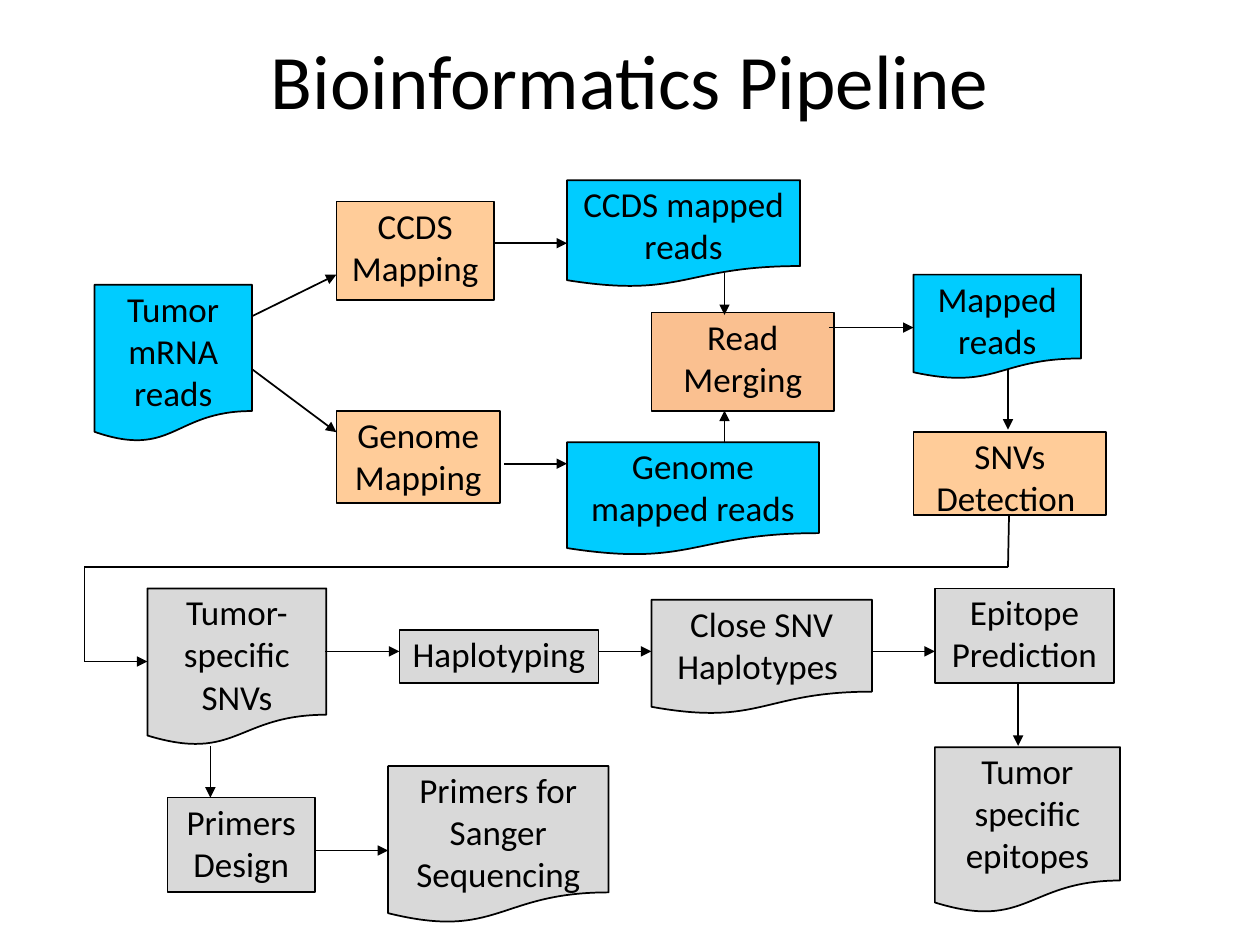
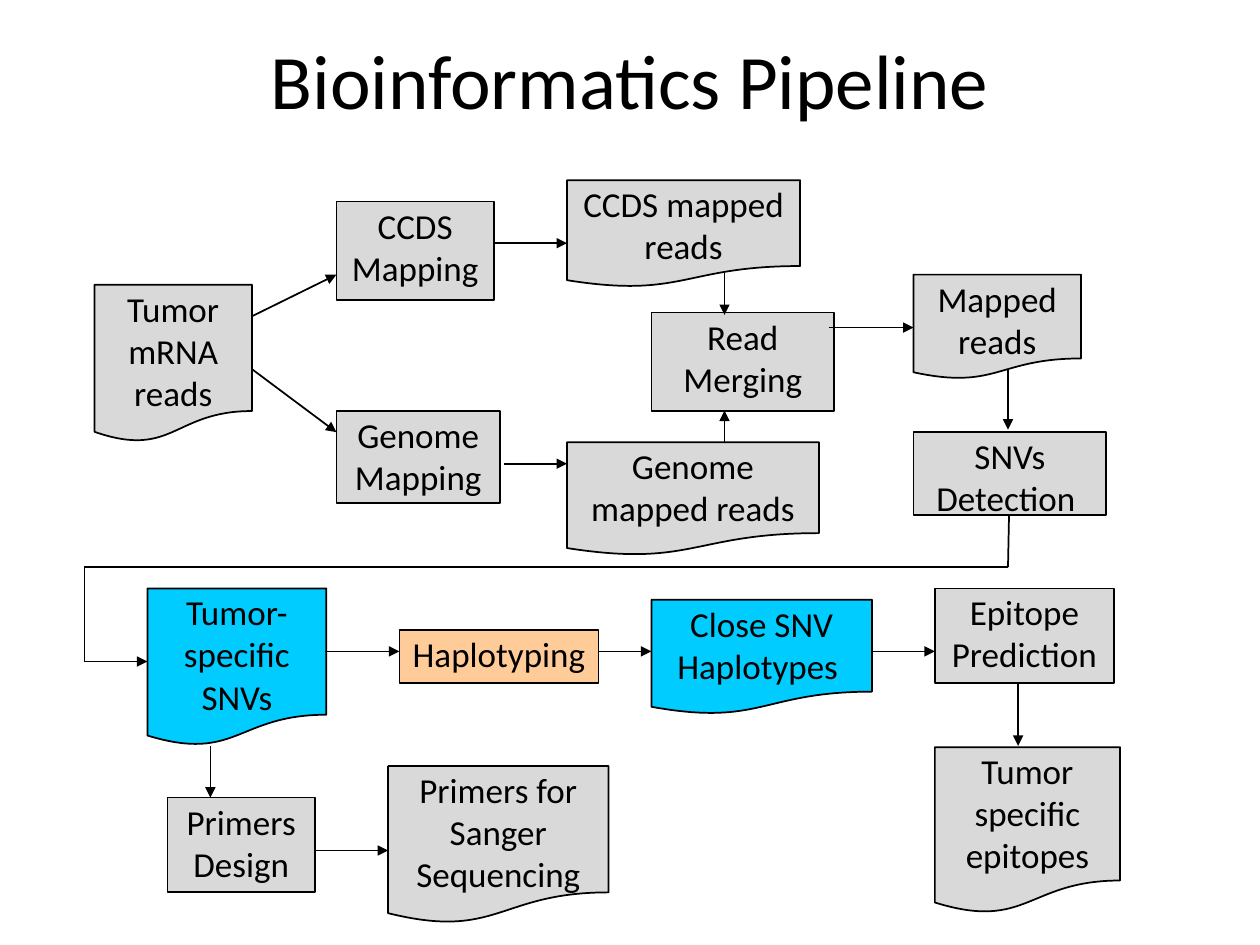
import lxml.etree
import pptx
import pptx.util
import pptx.dml.color
import pptx.enum.shapes
import pptx.enum.text
import pptx.oxml.ns

Inches = pptx.util.Inches
Pt = pptx.util.Pt
qn = pptx.oxml.ns.qn
SHAPES = pptx.enum.shapes.MSO_SHAPE

TITLE = "Bioinformatics Pipeline"
FONT = "Calibri"
BLACK = "000000"
INACTIVE = "D9D9D9"
KINDS = {
    "data": (SHAPES.FLOWCHART_DOCUMENT, "00CCFF"),
    "process": (SHAPES.FLOWCHART_PROCESS, "FFCC99"),
}

STEPS = {
    "tumor reads": ("data", ["Tumor mRNA reads"], (0.75, 2.26, 1.25, 1.25)),
    "ccds mapping": ("process", ["CCDS", "Mapping"], (2.67, 1.6, 1.25, 0.78)),
    "genome mapping": ("process", ["Genome Mapping"], (2.67, 3.26, 1.3, 0.73)),
    "read merging": ("process", ["Read Merging"], (5.17, 2.48, 1.45, 0.78)),
    "ccds reads": ("data", ["CCDS mapped reads"], (4.5, 1.43, 1.85, 0.85)),
    "genome reads": ("data", ["Genome mapped reads"], (4.5, 3.51, 2, 0.9)),
    "snv detection": ("process", ["SNVs Detection "], (7.25, 3.43, 1.53, 0.66)),
    "mapped reads": ("data", ["Mapped reads"], (7.25, 2.18, 1.33, 0.83)),
    "epitope prediction": ("process", ["Epitope Prediction"], (7.42, 4.67, 1.42, 0.75)),
    "epitopes": ("data", ["Tumor specific epitopes"], (7.42, 5.93, 1.47, 1.32)),
    "haplotyping": ("process", ["Haplotyping"], (3.17, 5, 1.58, 0.42)),
    "tumor snvs": ("data", ["Tumor-specific SNVs"], (1.17, 4.67, 1.42, 1.25)),
    "haplotypes": ("data", ["Close SNV Haplotypes "], (5.17, 4.76, 1.75, 0.91)),
    "primers design": ("process", ["Primers Design"], (1.33, 6.33, 1.17, 0.75)),
    "primers": ("data", ["Primers for Sanger Sequencing"], (3.08, 6.08, 1.75, 1.25)),
}

DETECTION_EXIT = (8.01, 4, 8, 4.5)
RETURN_LINES = [(0.67, 4.5, 8, 4.5), (0.67, 4.5, 0.67, 5.25)]
ARROWS = [
    (2, 2.51, 2.67, 2.18),
    (2, 2.93, 2.67, 3.43),
    (3.92, 1.93, 4.5, 1.93),
    (4, 3.68, 4.5, 3.68),
    (5.75, 3.52, 5.75, 3.26),
    (5.75, 2.17, 5.75, 2.5),
    (6.58, 2.6, 7.25, 2.6),
    (8, 2.93, 8, 3.41),
    (8.08, 5.42, 8.08, 5.92),
    (0.67, 5.25, 1.17, 5.25),
    (2.58, 5.17, 3.17, 5.17),
    (4.75, 5.17, 5.17, 5.17),
    (6.92, 5.17, 7.42, 5.17),
    (1.67, 5.92, 1.67, 6.33),
    (2.5, 6.75, 3.08, 6.75),
]

PAGES = [
    {
        "active": ["tumor reads", "ccds mapping", "genome mapping", "read merging",
                   "ccds reads", "genome reads", "snv detection", "mapped reads"],
        "special fills": {"read merging": "FAC090"},
    },
    {
        "active": ["tumor snvs", "haplotyping", "haplotypes"],
        "special fills": {},
    },
]


def color(value):
    return pptx.dml.color.RGBColor.from_string(value)


def add_span(para, text, size):
    para.alignment = pptx.enum.text.PP_ALIGN.CENTER
    span = para.add_run()
    span.text = text
    span.font.name = FONT
    span.font.size = Pt(size)
    span.font.color.rgb = color(BLACK)


def add_title(page):
    title = page.shapes.title
    title.left, title.top = Inches(0.5), Inches(0)
    title.width, title.height = Inches(9), Inches(1.25)
    title.text_frame.vertical_anchor = pptx.enum.text.MSO_ANCHOR.MIDDLE
    add_span(title.text_frame.paragraphs[0], TITLE, 44)


def add_step(page, kind, lines, place, fill):
    box = page.shapes.add_shape(KINDS[kind][0], *map(Inches, place))
    box.shadow.inherit = False
    box.fill.solid()
    box.fill.fore_color.rgb = color(fill)
    box.line.color.rgb = color(BLACK)
    box.line.width = Pt(1)
    frame = box.text_frame
    frame.word_wrap = True
    frame.vertical_anchor = pptx.enum.text.MSO_ANCHOR.TOP
    frame.margin_left = frame.margin_right = Inches(0.04)
    frame.margin_top = frame.margin_bottom = Inches(0.02)
    for index, line in enumerate(lines):
        para = frame.add_paragraph() if index else frame.paragraphs[0]
        add_span(para, line, 20)
    para.space_after = Pt(10)


def add_line(page, ends, arrow=False):
    line = page.shapes.add_connector(
        pptx.enum.shapes.MSO_CONNECTOR.STRAIGHT, *map(Inches, ends))
    line.line.color.rgb = color(BLACK)
    line.line.width = Pt(1)
    properties = line._element.find(qn("p:spPr"))
    if arrow:
        outline = properties.find(qn("a:ln"))
        lxml.etree.SubElement(outline, qn("a:tailEnd"), type="triangle")
    lxml.etree.SubElement(properties, qn("a:effectLst"))


def add_page(deck, active, special_fills):
    page = deck.slides.add_slide(deck.slide_layouts[5])
    add_title(page)
    add_line(page, DETECTION_EXIT)
    for name, (kind, lines, place) in STEPS.items():
        fill = KINDS[kind][1] if name in active else INACTIVE
        add_step(page, kind, lines, place, special_fills.get(name, fill))
    for ends in RETURN_LINES:
        add_line(page, ends)
    for ends in ARROWS:
        add_line(page, ends, arrow=True)


def main():
    deck = pptx.Presentation()
    deck.slide_width, deck.slide_height = Inches(10), Inches(7.5)
    for content in PAGES:
        add_page(deck, content["active"], content["special fills"])
    deck.save("out.pptx")


if __name__ == "__main__":
    main()
